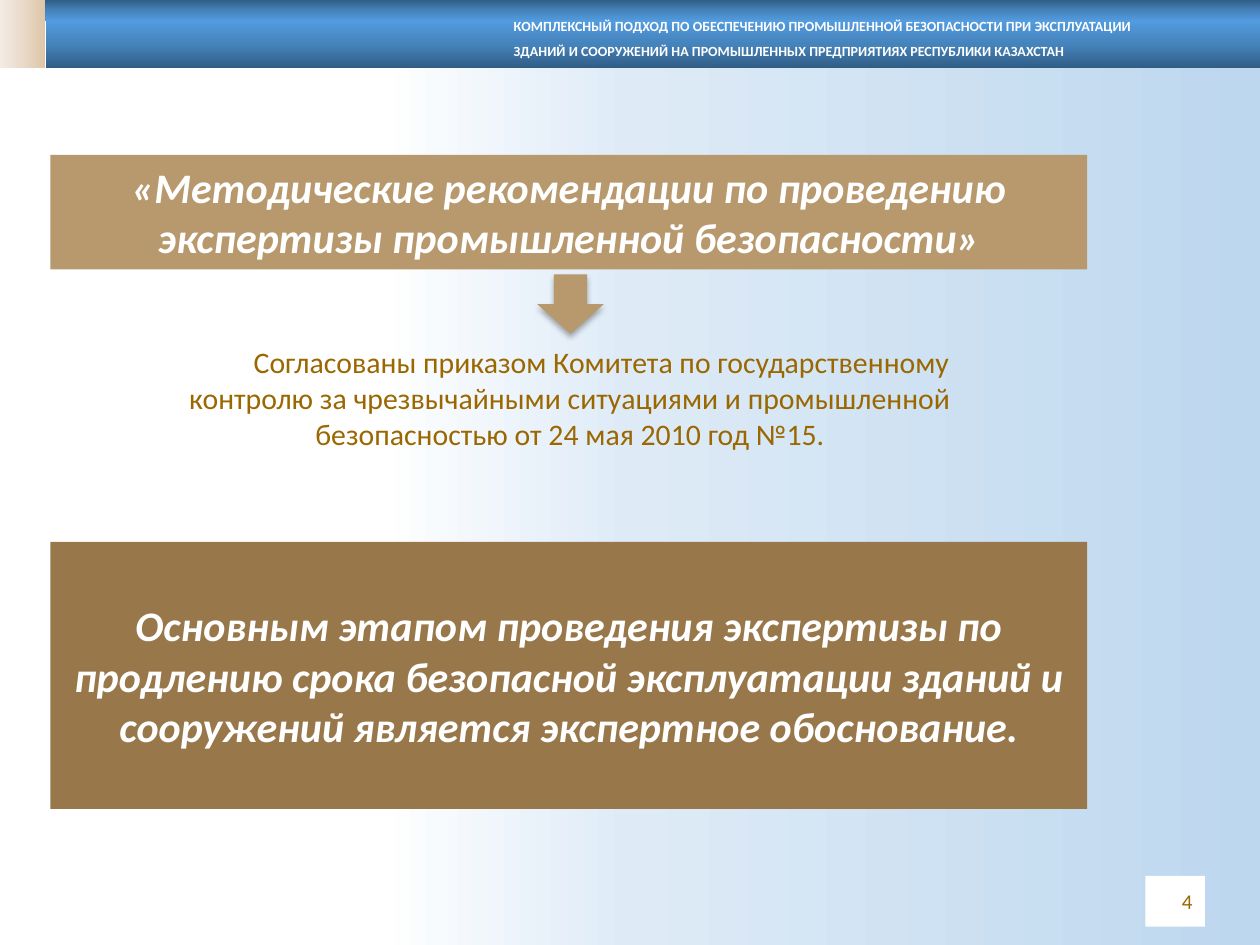
from copy import deepcopy
from dataclasses import dataclass
from typing import Optional

from lxml.etree import SubElement
from pptx import Presentation
from pptx.dml.color import RGBColor
from pptx.enum.shapes import MSO_SHAPE
from pptx.enum.text import MSO_ANCHOR, PP_ALIGN
from pptx.oxml.ns import qn
from pptx.shapes.autoshape import Shape
from pptx.slide import Slide
from pptx.util import Pt

WHITE = RGBColor(0xFF, 0xFF, 0xFF)
TAN = RGBColor(0xB7, 0x99, 0x6D)
BROWN = RGBColor(0x98, 0x78, 0x4A)
OCHRE = RGBColor(0x9A, 0x67, 0x00)
BACKDROP = ((30, WHITE), (50, RGBColor(0xDE, 0xEB, 0xF7)), (100, RGBColor(0xBD, 0xD7, 0xEE)))
BLUES = ((0, RGBColor(0x30, 0x5C, 0x84)), (50, RGBColor(0x45, 0x83, 0xBB)),
         (100, RGBColor(0x52, 0x9B, 0xDE)))
SANDS = ((0, RGBColor(0xDD, 0xC5, 0xA7)), (50, RGBColor(0xE9, 0xDA, 0xC9)),
         (100, RGBColor(0xF3, 0xEC, 0xE4)))
FONT = "Calibri"
WIDTH, HEIGHT = 720, 540


@dataclass(frozen=True)
class Box:
    left: float
    top: float
    width: float
    height: float


@dataclass(frozen=True)
class Band:
    box: Box
    stops: tuple
    angle: int  # counter-clockwise, in degrees
    rotation: int = 0


@dataclass(frozen=True)
class TextBlock:
    box: Box
    text: str
    size: float
    color: RGBColor = WHITE
    fill: Optional[RGBColor] = None
    bold: bool = False
    italic: bool = False
    align: PP_ALIGN = PP_ALIGN.CENTER
    anchor: MSO_ANCHOR = MSO_ANCHOR.TOP
    line_spacing: float = 1.0
    first_indent: float = 0


BANDS = (
    Band(Box(0, 0, WIDTH, HEIGHT), BACKDROP, 0),
    Band(Box(0, 0, WIDTH, 12), BLUES, 270),
    Band(Box(26, 12, WIDTH - 26, 27), BLUES, 270, rotation=180),
    Band(Box(0, 0, 26, 39), SANDS, 180),
)

TEXT_BLOCKS = (
    TextBlock(Box(286.5, 1.5, 390, 36),
              "КОМПЛЕКСНЫЙ ПОДХОД ПО ОБЕСПЕЧЕНИЮ ПРОМЫШЛЕННОЙ БЕЗОПАСНОСТИ ПРИ ЭКСПЛУАТАЦИИ "
              "ЗДАНИЙ И СООРУЖЕНИЙ НА ПРОМЫШЛЕННЫХ ПРЕДПРИЯТИЯХ РЕСПУБЛИКИ КАЗАХСТАН",
              8, bold=True, align=PP_ALIGN.LEFT, line_spacing=1.5),
    TextBlock(Box(654.5, 500.5, 34, 29), "4", 12, OCHRE, WHITE,
              align=PP_ALIGN.RIGHT, anchor=MSO_ANCHOR.MIDDLE),
    TextBlock(Box(70.5, 193, 510.5, 69),
              "Согласованы приказом Комитета по государственному контролю за чрезвычайными "
              "ситуациями и промышленной безопасностью от 24 мая 2010 год №15.",
              17, OCHRE, first_indent=36),
    TextBlock(Box(28.8, 88.5, 592.5, 65.5),
              "«Методические рекомендации по проведению экспертизы промышленной безопасности»",
              24, fill=TAN, bold=True, italic=True),
    TextBlock(Box(28.8, 309.6, 592.5, 152.6),
              "Основным этапом проведения экспертизы по продлению срока безопасной эксплуатации "
              "зданий и сооружений является экспертное обоснование.",
              24, fill=BROWN, bold=True, italic=True, anchor=MSO_ANCHOR.MIDDLE),
)


def place(box: Box) -> tuple:
    return Pt(box.left), Pt(box.top), Pt(box.width), Pt(box.height)


def add_plain_shape(slide: Slide, kind: MSO_SHAPE, box: Box) -> Shape:
    shape = slide.shapes.add_shape(kind, *place(box))
    shape.shadow.inherit = False
    shape.line.fill.background()
    return shape


def add_band(slide: Slide, band: Band) -> None:
    shape = add_plain_shape(slide, MSO_SHAPE.RECTANGLE, band.box)
    shape.rotation = band.rotation
    shape.fill.gradient()
    shape.fill.gradient_angle = band.angle
    # The default gradient has two stops; a third is needed
    stop_list = shape._element.spPr.find(".//" + qn("a:gsLst"))
    stop_list.append(deepcopy(stop_list[-1]))
    for stop, (position, color) in zip(shape.fill.gradient_stops, band.stops):
        stop.position = position / 100
        stop.color.rgb = color


def add_text(slide: Slide, block: TextBlock) -> None:
    if block.fill is None:
        shape = slide.shapes.add_textbox(*place(block.box))
    else:
        shape = add_plain_shape(slide, MSO_SHAPE.RECTANGLE, block.box)
        shape.fill.solid()
        shape.fill.fore_color.rgb = block.fill
    frame = shape.text_frame
    frame.word_wrap = True
    frame.vertical_anchor = block.anchor
    paragraph = frame.paragraphs[0]
    paragraph.alignment = block.align
    paragraph.line_spacing = block.line_spacing
    if block.first_indent:
        properties = paragraph._p.get_or_add_pPr()
        properties.set("marL", "0")
        properties.set("indent", str(Pt(block.first_indent)))
    run = paragraph.add_run()
    run.text = block.text
    run.font.name = FONT
    run.font.size = Pt(block.size)
    run.font.bold = block.bold
    run.font.italic = block.italic
    run.font.color.rgb = block.color


def add_arrow(slide: Slide, box: Box) -> None:
    arrow = add_plain_shape(slide, MSO_SHAPE.RIGHT_ARROW, box)
    arrow.rotation = 90
    arrow.fill.solid()
    arrow.fill.fore_color.rgb = TAN
    # Soft shadow straight below
    effects = arrow._element.spPr.find(qn("a:effectLst"))
    shadow = SubElement(effects, qn("a:outerShdw"), blurRad=str(Pt(3.5)),
                        dist=str(Pt(2.2)), dir="5400000", rotWithShape="0")
    color = SubElement(shadow, qn("a:srgbClr"), val="000000")
    SubElement(color, qn("a:alpha"), val="32000")


def main() -> None:
    presentation = Presentation()
    presentation.slide_width, presentation.slide_height = Pt(WIDTH), Pt(HEIGHT)
    slide = presentation.slides.add_slide(presentation.slide_layouts[6])

    # Backdrop and header
    for band in BANDS:
        add_band(slide, band)

    # Header title, page number and content
    for block in TEXT_BLOCKS:
        add_text(slide, block)

    # Arrow from the recommendations to their approval
    add_arrow(slide, Box(309, 154.8, 34, 38))

    presentation.save("out.pptx")


if __name__ == "__main__":
    main()
